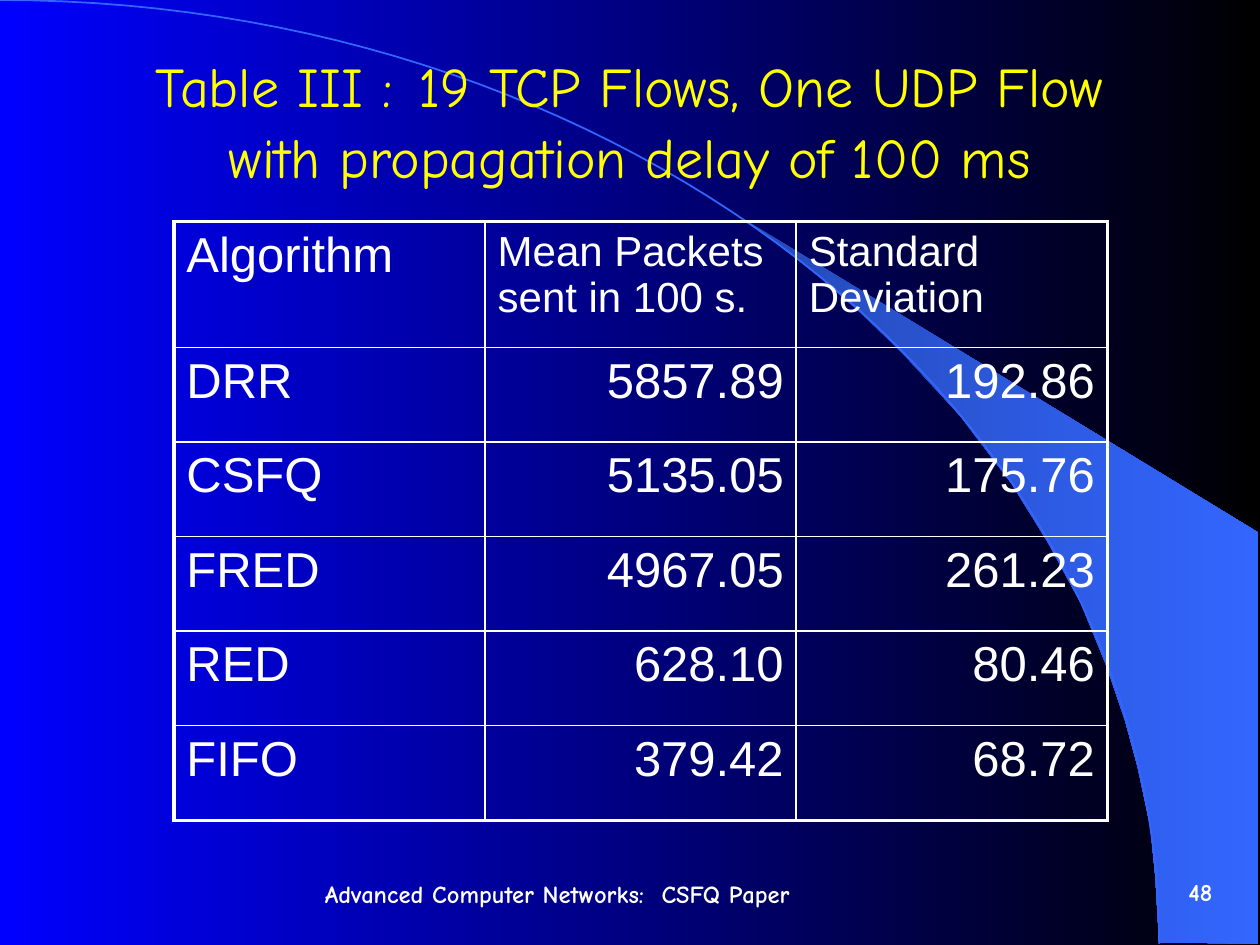
import pptx
import pptx.dml.color
import pptx.enum.text
import pptx.oxml
import pptx.oxml.ns
import pptx.util
from pptx.util import Inches

ALIGN = pptx.enum.text.PP_ALIGN
MIDDLE = pptx.enum.text.MSO_ANCHOR.MIDDLE
WHITE, YELLOW, BLUE = "FFFFFF", "FFFF00", "3366FF"

RESULTS = [
    ("Algorithm", "Mean Packets sent in 100 s.", "Standard Deviation"),
    ("DRR", "5857.89", "192.86"),
    ("CSFQ", "5135.05", "175.76"),
    ("FRED", "4967.05", "261.23"),
    ("RED", "628.10", "80.46"),
    ("FIFO", "379.42", "68.72"),
]
BEAM = [
    (9.2, 7.48), (9.99, 7.49), (9.99, 4.23), (5.89, 1.73), (6.24, 1.99), (6.53, 2.22),
    (6.85, 2.5), (7.16, 2.8), (7.62, 3.3), (8.03, 3.84), (8.32, 4.31), (8.58, 4.79),
    (8.78, 5.28), (8.93, 5.72), (9.03, 6.09), (9.13, 6.56), (9.17, 6.96),
]
ARC = [(0, 0), (5.08, 0), (9.2, 3.35), (9.2, 7.49)]


def rgb(color):
    return pptx.dml.color.RGBColor.from_string(color)


def bezier(controls, steps=60):
    """Return points along a cubic curve."""
    points = []
    for step in range(steps + 1):
        t = step / steps
        weights = ((1 - t) ** 3, 3 * t * (1 - t) ** 2, 3 * t * t * (1 - t), t ** 3)
        points.append(tuple(sum(w * c[axis] for w, c in zip(weights, controls))
                            for axis in (0, 1)))
    return points


def fill_gradient(fill, start, end):
    """Apply a left-to-right gradient."""
    fill.gradient()
    fill.gradient_angle = 0
    for stop, color in zip(fill.gradient_stops, (start, end)):
        stop.color.rgb = rgb(color)


class SlideBuilder:
    display_font = "Comic Neue"
    table_font = "Arial"

    def __init__(self, presentation):
        self.slide = presentation.slides.add_slide(presentation.slide_layouts[5])
        fill_gradient(self.slide.background.fill, "0000FF", "000000")

    def add_run(self, paragraph, text, size, color=WHITE, font=display_font, bold=False):
        run = paragraph.add_run()
        run.text = text
        run.font.name = font
        run.font.size = pptx.util.Pt(size)
        run.font.bold = bold
        run.font.color.rgb = rgb(color)

    def outline(self, points, close):
        points = [(Inches(x), Inches(y)) for x, y in points]
        builder = self.slide.shapes.build_freeform(*points[0])
        builder.add_line_segments(points[1:], close=close)
        shape = builder.convert_to_shape()
        shape.shadow.inherit = False
        return shape

    def beam(self, points):
        shape = self.outline(points, close=True)
        fill_gradient(shape.fill, "2449B6", BLUE)
        shape.line.fill.background()

    def arc(self, controls):
        shape = self.outline(bezier(controls), close=False)
        shape.fill.background()
        shape.line.color.rgb = rgb(BLUE)
        shape.line.width = pptx.util.Pt(1)

    def title(self, runs, left, top, width, height):
        title = self.slide.shapes.title
        title.left, title.top = Inches(left), Inches(top)
        title.width, title.height = Inches(width), Inches(height)
        title._element.getparent().append(title._element)  # in front of the decoration
        frame = title.text_frame
        frame.auto_size = pptx.enum.text.MSO_AUTO_SIZE.NONE
        frame.vertical_anchor = MIDDLE
        paragraph = frame.paragraphs[0]
        paragraph.alignment = ALIGN.CENTER
        for text, size in runs:
            self.add_run(paragraph, text, size, YELLOW)

    def footer(self, text, left, top, width, height, alignment=ALIGN.LEFT):
        box = self.slide.shapes.add_textbox(
            Inches(left), Inches(top), Inches(width), Inches(height))
        frame = box.text_frame
        frame.word_wrap = True
        frame.vertical_anchor = MIDDLE
        paragraph = frame.paragraphs[0]
        paragraph.alignment = alignment
        self.add_run(paragraph, text, 14, bold=True)

    def border(self, cell, side, width):
        line = pptx.oxml.parse_xml(
            f'<a:ln{side} {pptx.oxml.ns.nsdecls("a")} w="{pptx.util.Pt(width)}">'
            f'<a:solidFill><a:srgbClr val="{WHITE}"/></a:solidFill></a:ln{side}>')
        cell._tc.get_or_add_tcPr().append(line)

    def table(self, rows, left, top, column_width, row_heights):
        row_count, column_count = len(rows), len(rows[0])
        table = self.slide.shapes.add_table(
            row_count, column_count, Inches(left), Inches(top),
            Inches(column_width * column_count), Inches(sum(row_heights))).table
        table.first_row = table.horz_banding = False
        for column in table.columns:
            column.width = Inches(column_width)
        for r, (texts, height) in enumerate(zip(rows, row_heights)):
            table.rows[r].height = Inches(height)
            for c, text in enumerate(texts):
                cell = table.cell(r, c)
                outer_sides = {"L": c == 0, "R": c == column_count - 1,
                               "T": r == 0, "B": r == row_count - 1}
                for side, outer in outer_sides.items():
                    self.border(cell, side, 2.25 if outer else 1)
                cell.fill.background()
                paragraph = cell.text_frame.paragraphs[0]
                paragraph.alignment = ALIGN.RIGHT if r and c else ALIGN.LEFT
                size = 24 if r == 0 and c else 28
                self.add_run(paragraph, text, size, font=self.table_font)


def main():
    presentation = pptx.Presentation()
    presentation.slide_width, presentation.slide_height = Inches(10), Inches(7.5)
    builder = SlideBuilder(presentation)
    builder.beam(BEAM)
    builder.arc(ARC)
    builder.footer("Advanced Computer Networks:  CSFQ Paper", 2.48, 6.9, 4.88, 0.39)
    builder.footer("48", 8.23, 6.82, 1.49, 0.51, ALIGN.RIGHT)
    builder.title(
        [("Table III :", 32), (" ", 44),
         ("19 TCP Flows, One UDP Flow with propagation delay of 100 ms", 32)],
        0.75, 0.25, 8.5, 1.25)
    builder.table(RESULTS, 1.38, 1.76, 2.47, [1] + [0.75] * 5)
    presentation.save("out.pptx")


if __name__ == "__main__":
    main()
